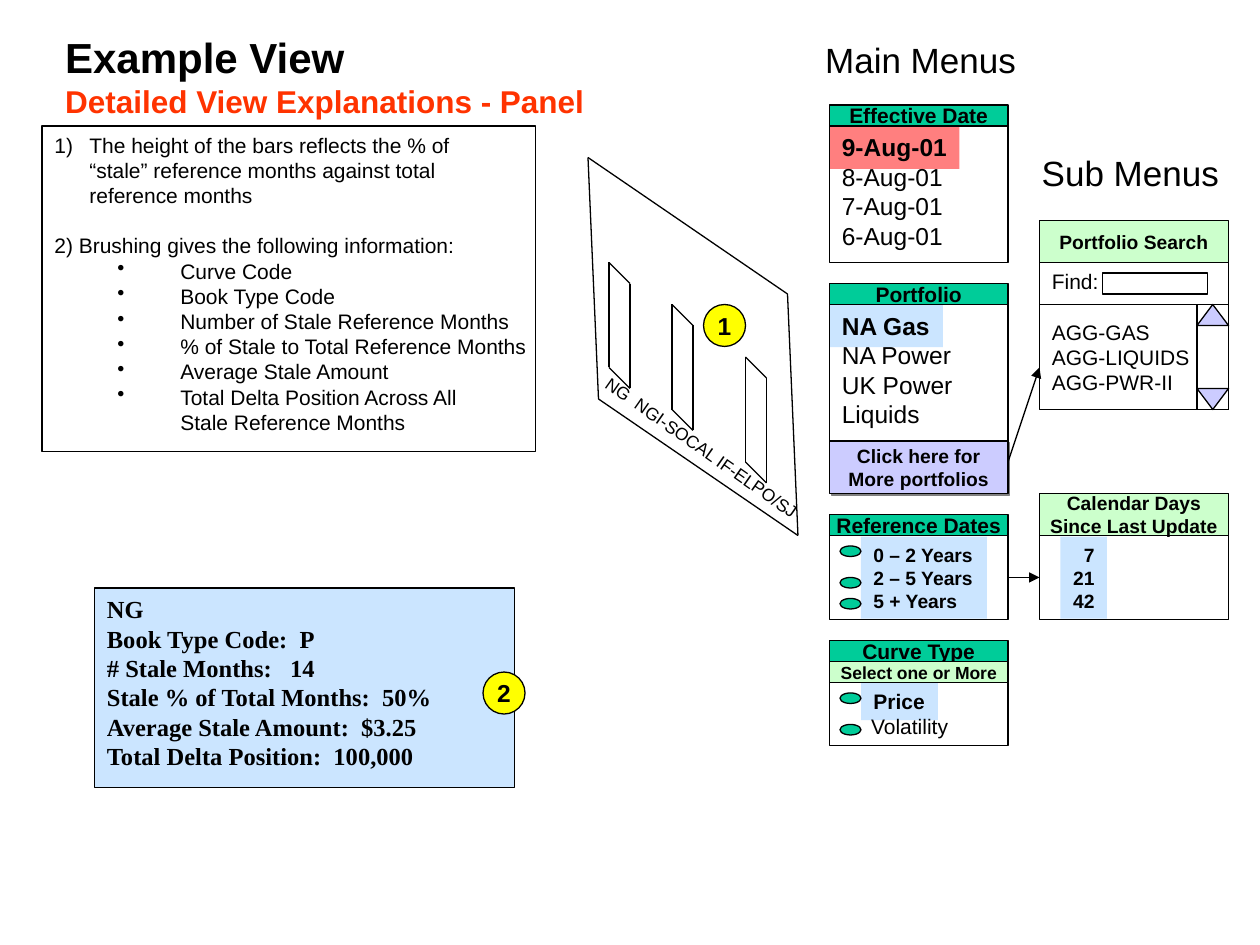
import pptx
import pptx.dml.color
import pptx.enum.shapes
import pptx.enum.text
import pptx.oxml
import pptx.oxml.ns
import pptx.util

Pt = pptx.util.Pt
SHAPE = pptx.enum.shapes.MSO_SHAPE
ALIGN = pptx.enum.text.PP_ALIGN
ANCHOR = pptx.enum.text.MSO_ANCHOR
COLORS = {
    "black": "000000", "red": "FF0000", "title": "FF3300", "green": "00CC99",
    "mint": "CCFFCC", "blue": "99CCFF", "lilac": "CCCCFF", "yellow": "FFFF00",
    "shadow": "808080",
}
GAP = 1.2  # height of a skipped line, as a multiple of the text size


def rgb(name):
    return pptx.dml.color.RGBColor.from_string(COLORS[name])


def xml(parent, markup):
    """Append an element written in the drawing namespace."""
    tag, rest = markup.split(" ", 1)
    ns = pptx.oxml.ns.nsdecls("a")
    parent.append(pptx.oxml.parse_xml(f"<{tag} {ns} {rest}"))


def write(tf, text, size=12, bold=False, color="black", font="Arial", align=ALIGN.LEFT,
          left=0, first=0, before=0, bullet=None):
    """Add one paragraph for each line of text."""
    for i, line in enumerate(text.split("\n")):
        p = tf.paragraphs[0]
        if p.runs:
            p = tf.add_paragraph()
        p.alignment = align
        if before and i == 0:
            p.space_before = Pt(before)
        pPr = p._p.get_or_add_pPr()
        pPr.set("marL", str(Pt(left)))
        pPr.set("indent", str(Pt(first)))
        if bullet:
            xml(pPr, f'a:buChar char="{bullet}"/>')
        r = p.add_run()
        r.text = line
        r.font.size, r.font.bold, r.font.name = Pt(size), bold, font
        r.font.color.rgb = rgb(color)


class Canvas:
    line_width = 0.75

    def __init__(self, s):
        self.s = s

    def frame(self, sp, top=3.6, center=False, insets=(7.2, 0)):
        tf = sp.text_frame
        tf.auto_size = pptx.enum.text.MSO_AUTO_SIZE.NONE
        tf.word_wrap = not center
        tf.vertical_anchor = ANCHOR.MIDDLE if center else ANCHOR.TOP
        tf.margin_left, tf.margin_right = [Pt(v) for v in insets]
        tf.margin_top, tf.margin_bottom = Pt(top), Pt(3.6)
        return tf

    def title(self, x, y, w, h):
        sp = self.s.shapes.title
        sp.left, sp.top, sp.width, sp.height = Pt(x), Pt(y), Pt(w), Pt(h)
        return self.frame(sp)

    def label(self, x, y, w, h, text, rotation=0, **style):
        sp = self.s.shapes.add_textbox(Pt(x), Pt(y), Pt(w), Pt(h))
        sp.rotation = rotation
        write(self.frame(sp), text, **style)

    def shape(self, x, y, w, h, fill=None, kind=SHAPE.RECTANGLE, line=True, alpha=None):
        sp = self.s.shapes.add_shape(kind, Pt(x), Pt(y), Pt(w), Pt(h))
        sp.shadow.inherit = False
        if fill:
            sp.fill.solid()
            sp.fill.fore_color.rgb = rgb(fill)
            if alpha:
                clr = sp._element.spPr.find(".//" + pptx.oxml.ns.qn("a:srgbClr"))
                xml(clr, f'a:alpha val="{alpha * 1000}"/>')
        else:
            sp.fill.background()
        if line:
            sp.line.color.rgb = rgb("black")
            sp.line.width = Pt(self.line_width)
        else:
            sp.line.fill.background()
        return sp

    def caption(self, x, y, w, h, text, fill, size=12, **kw):
        sp = self.shape(x, y, w, h, fill, **kw)
        write(self.frame(sp, center=True, insets=(7.2, 7.2)), text, size, True,
              align=ALIGN.CENTER)
        return sp

    def panel(self, x, y, w, h, text, top=3.6, fill=None, alpha=None, **style):
        tf = self.frame(self.shape(x, y, w, h, fill, alpha=alpha), top)
        write(tf, text, **style)
        return tf

    def highlight(self, x, y, w, h, text, size, fill="blue", insets=(7.2, 0), **style):
        sp = self.shape(x, y, w, h, fill, line=False, alpha=50)
        write(self.frame(sp, insets=insets), text, size, True, **style)

    def badge(self, x, y, text):
        self.caption(x, y, 24, 24, text, "yellow", 14, kind=SHAPE.OVAL)

    def bullets(self, x, *tops):
        for y in tops:
            self.shape(x, y, 12, 6, "green", SHAPE.OVAL)

    def line(self, start, end, arrow=False):
        c = self.s.shapes.add_connector(
            pptx.enum.shapes.MSO_CONNECTOR.STRAIGHT, *[Pt(v) for v in start + end])
        c.line.color.rgb = rgb("black")
        c.line.width = Pt(self.line_width)
        if arrow:
            xml(c.line._get_or_add_ln(), 'a:tailEnd type="triangle"/>')
        xml(c._element.spPr, "a:effectLst />")

    def outline(self, *points):
        for start, end in zip(points, points[1:] + points[:1]):
            self.line(start, end)


def main():
    prs = pptx.Presentation()
    prs.slide_width, prs.slide_height = Pt(720), Pt(540)
    cv = Canvas(prs.slides.add_slide(prs.slide_layouts[5]))

    # Title and column headings
    tf = cv.title(30, 14.4, 311, 57.6)
    write(tf, "Example View", 24, True)
    write(tf, "Detailed View Explanations - Panel", 18, True, "title")
    cv.label(464.4, 18.7, 123, 31.7, "Main Menus", size=20)
    cv.label(588.2, 82.8, 116, 31.7, "Sub Menus", size=20)

    # Explanations
    tf = cv.panel(24, 72, 282, 186, "1)\tThe height of the bars reflects the % of",
                  left=20, first=-20)
    write(tf, "“stale” reference months against total\nreference months", left=20)
    write(tf, "2) Brushing gives the following information:", before=12 * GAP)
    write(tf, "Curve Code\nBook Type Code\nNumber of Stale Reference Months\n"
              "% of Stale to Total Reference Months\nAverage Stale Amount\n"
              "Total Delta Position Across All", left=72, first=-36, bullet="•")
    write(tf, "Stale Reference Months", left=72)

    # Slanted panel with its bars
    cv.outline((336, 90), (450, 168), (456, 306), (342, 228))
    for x, y in (348, 150), (384, 174), (426, 204):
        cv.outline((x, y), (x + 12, y + 12), (x + 12, y + 72), (x, y + 60))
    cv.label(328.3, 246.2, 145.4, 19.4, "NG  NGI-SOCAL IF-ELPO/SJ", rotation=35, size=10)
    cv.badge(402, 174, "1")

    # Brushing details
    cv.panel(54, 336, 240, 114,
             "NG\nBook Type Code:  P\n# Stale Months:   14\nStale % of Total Months:  50%\n"
             "Average Stale Amount:  $3.25\nTotal Delta Position:  100,000",
             fill="blue", alpha=50, size=14, bold=True, font="Times New Roman")
    cv.badge(276, 384, "2")

    # Main menus
    x, w = 474, 102
    for y, text in ((60, "Effective Date"), (162, "Portfolio"),
                    (294, "Reference Dates"), (366, "Curve Type")):
        cv.caption(x, y, w, 12, text, "green")
    below = 3.6 + 14 * GAP
    cv.highlight(x, 72, 74.2, 24.5, "9-Aug-01", 14, "red")
    cv.panel(x, 72, w, 78, "8-Aug-01\n7-Aug-01\n6-Aug-01", below, size=14)
    cv.highlight(x, 174, 64.8, 24.5, "NA Gas", 14)
    cv.panel(x, 174, w, 78, "NA Power\nUK Power\nLiquids", below, size=14)
    button = cv.caption(x, 252, w, 30, "Click here for\nMore portfolios", "lilac", 11)
    xml(button._element.spPr.find(pptx.oxml.ns.qn("a:effectLst")),
        f'a:outerShdw dist="{Pt(1.4)}" dir="2700000">'
        f'<a:srgbClr val="{COLORS["shadow"]}"/></a:outerShdw>')
    cv.highlight(492, 306.7, 72, 46.8, "0 – 2 Years\n2 – 5 Years\n5 + Years", 11)
    cv.shape(x, 306, w, 48)
    cv.bullets(480, 312, 330, 342)
    cv.caption(x, 378, w, 12, "Select one or More", "mint", 10)
    cv.highlight(492, 390, 43.9, 21.6, "Price", 12)
    cv.panel(x, 390, w, 36, "Volatility", 3.6 + 12 * GAP, left=16.7)
    cv.bullets(480, 396, 414)

    # Sub menu: portfolio search
    x, w = 594, 108
    cv.caption(x, 126, w, 24, "Portfolio Search", "mint", 11)
    tf = cv.panel(x, 150, w, 84, "Find:")
    write(tf, "AGG-GAS\nAGG-LIQUIDS\nAGG-PWR-II", before=12 * GAP)
    cv.shape(630, 156, 60, 12)
    cv.line((x, 174), (x + w, 174))
    cv.shape(684, 174, 18, 60)
    for y, rotation in (174, 0), (222, 180):
        cv.shape(684, y, 18, 12, "lilac", SHAPE.ISOSCELES_TRIANGLE).rotation = rotation
    cv.line((576, 264), (594, 210), arrow=True)

    # Sub menu: calendar days
    cv.caption(x, 282, w, 24, "Calendar Days\nSince Last Update", "mint", 11)
    cv.highlight(606, 306.7, 26.6, 46.8, "7\n21\n42", 11, insets=(0, 7.2), align=ALIGN.RIGHT)
    cv.shape(x, 306, w, 48)
    cv.line((576, 330), (594, 330), arrow=True)

    prs.save("out.pptx")


if __name__ == "__main__":
    main()
